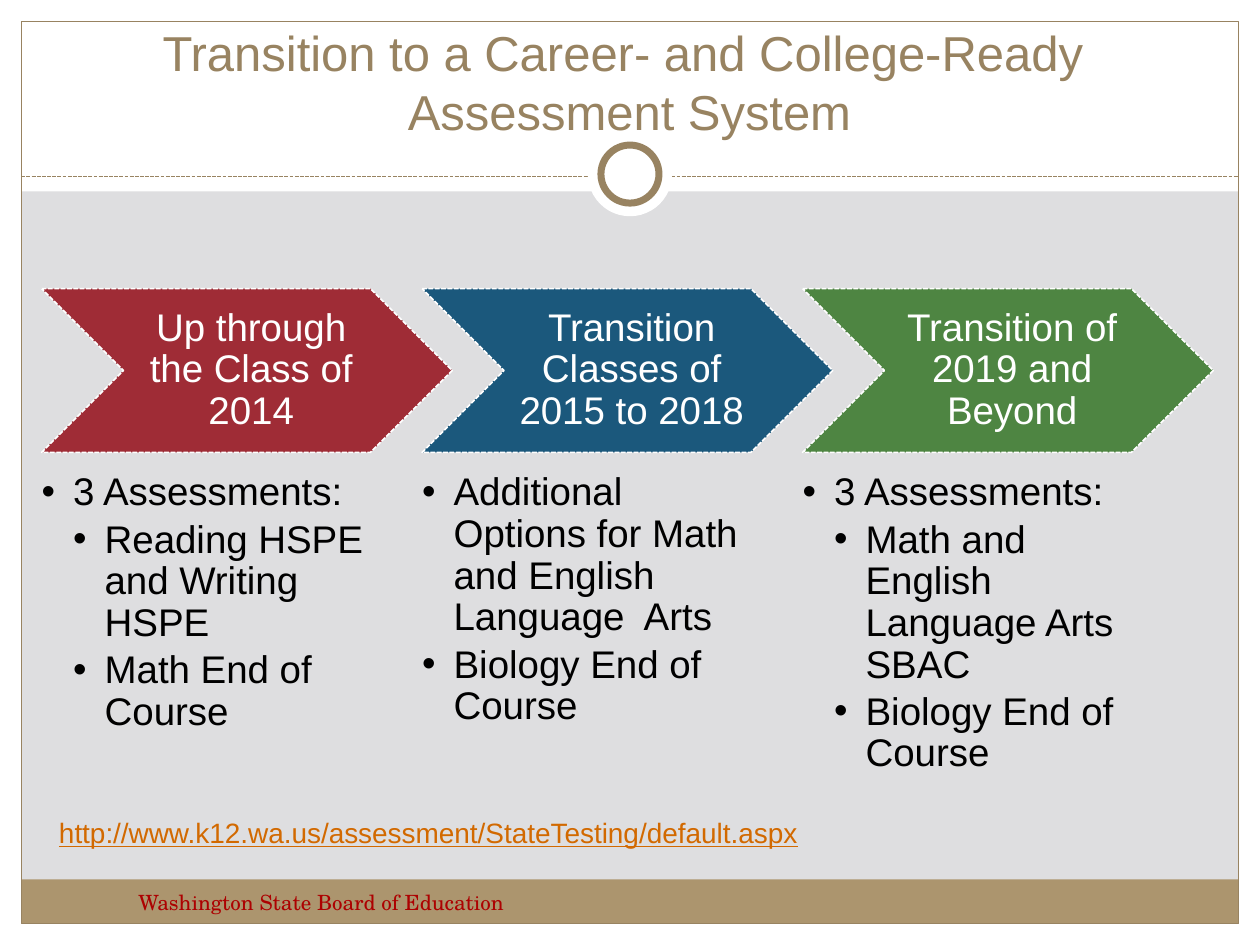
import dataclasses

import lxml.etree
import pptx
import pptx.dml.color
import pptx.enum.dml
import pptx.enum.shapes
import pptx.enum.text
import pptx.oxml.ns
import pptx.util

Cm = pptx.util.Cm
Pt = pptx.util.Pt
qn = pptx.oxml.ns.qn
Shape = pptx.enum.shapes.MSO_SHAPE
Align = pptx.enum.text.PP_ALIGN
Anchor = pptx.enum.text.MSO_ANCHOR
Fit = pptx.enum.text.MSO_AUTO_SIZE
Dash = pptx.enum.dml.MSO_LINE.SQUARE_DOT


@dataclasses.dataclass(frozen=True)
class Theme:
    sans: str = "Arial"
    serif: str = "TeX Gyre Schola"
    back: str = "DEDEE0"
    white: str = "FFFFFF"
    black: str = "000000"
    tan: str = "988361"
    bar: str = "AC956E"
    red: str = "AD0101"
    link: str = "D26900"
    steps: tuple = ("9F2C36", "1B587C", "4E8542")
    head: int = 28
    body: int = 22
    url: int = 16
    foot: int = 12


THEME = Theme()

STEPS = [
    ("Up through the Class of 2014",
     [(1, "3 Assessments:"),
      (2, "Reading HSPE and Writing HSPE"),
      (2, "Math End of Course")]),
    ("Transition Classes of 2015 to 2018",
     [(1, "Additional Options for Math and English Language  Arts"),
      (1, "Biology End of Course")]),
    ("Transition of 2019 and Beyond",
     [(1, "3 Assessments:"),
      (2, "Math and English Language Arts SBAC"),
      (2, "Biology End of Course")]),
]


def rgb(code):
    return pptx.dml.color.RGBColor.from_string(code)


def place(shape, box):
    shape.left, shape.top, shape.width, shape.height = map(Cm, box)


def lift(shape):
    shape.element.getparent().append(shape.element)


def style(para, size, color, face=THEME.sans):
    font = para.font
    font.name, font.size, font.color.rgb = face, Pt(size), rgb(color)


def inset(frame, left, rest):
    frame.margin_left = Cm(left)
    frame.margin_top = frame.margin_right = frame.margin_bottom = Cm(rest)


def stroke(line, color, width, dash=None):
    line.color.rgb = rgb(color)
    line.width = Pt(width)
    if dash:
        line.dash_style = dash


def draw(slide, kind, box, fill=None, line=None):
    shape = slide.shapes.add_shape(kind, *map(Cm, box))
    shape.shadow.inherit = False
    if fill:
        shape.fill.solid()
        shape.fill.fore_color.rgb = rgb(fill)
    else:
        shape.fill.background()
    if line:
        stroke(shape.line, *line)
    else:
        shape.line.fill.background()
    return shape


def disc(slide, x, y, size, line=None):
    box = (x - size / 2, y - size / 2, size, size)
    draw(slide, Shape.OVAL, box, THEME.white, line)


def frame(slide, box):
    x, y, w, h = box
    edge, band, foot = 0.43, 3.86, 0.89
    inner = w - 2 * edge
    for strip in ((x, y + h - edge, w, edge), (x, y, w, band),
                  (x, y, edge, h), (x + w - edge, y, edge, h)):
        draw(slide, Shape.RECTANGLE, strip, THEME.white)
    draw(slide, Shape.RECTANGLE,
         (x + edge, y + h - edge - foot, inner, foot), THEME.bar)
    draw(slide, Shape.RECTANGLE,
         (x + edge, y + edge, inner, h - 2 * edge), line=(THEME.tan, 0.75))
    rule = slide.shapes.add_connector(
        pptx.enum.shapes.MSO_CONNECTOR.STRAIGHT,
        Cm(x + edge), Cm(y + 3.56), Cm(x + w - edge), Cm(y + 3.56))
    stroke(rule.line, THEME.tan, 0.75, Dash)
    lxml.etree.SubElement(rule.element.spPr, qn("a:effectLst"))
    disc(slide, x + w / 2, y + 3.51, 1.7)
    disc(slide, x + w / 2, y + 3.51, 1.17, (THEME.tan, 4))


def title(slide, box, text):
    shape = slide.shapes.title
    place(shape, box)
    lift(shape)
    area = shape.text_frame
    area.text = text
    area.auto_size = Fit.NONE
    area.vertical_anchor = Anchor.BOTTOM
    para = area.paragraphs[0]
    para.alignment = Align.CENTER
    style(para, THEME.head, THEME.tan)


def bullets(holder, box, items):
    place(holder, box)
    lift(holder)
    area = holder.text_frame
    area.text = "\n".join(text for _, text in items)
    area.auto_size = Fit.NONE
    area.vertical_anchor = Anchor.TOP
    inset(area, 0, 0)
    for para, (level, _) in zip(area.paragraphs, items):
        para.level = level
        props = para._p.get_or_add_pPr()
        props.set("marL", str(Cm(0.635 * level)))
        props.set("indent", str(-Cm(0.635)))
        lxml.etree.SubElement(props, qn("a:buFont")).set("typeface", THEME.sans)
        lxml.etree.SubElement(props, qn("a:buChar")).set("char", "•")
        para.alignment = Align.LEFT
        para.line_spacing = 0.9
        para.space_before = Pt(0)
        para.space_after = Pt(3.3)
        style(para, THEME.body, THEME.black)
        para.font.bold = False


def step(slide, box, holder, fill, head, items):
    x, y, w, h = box
    tall = 3.3
    arrow = draw(slide, Shape.CHEVRON, (x, y, w, tall), fill,
                 (THEME.white, 0.9, Dash))
    area = arrow.text_frame
    area.text = head
    area.word_wrap = True
    area.vertical_anchor = Anchor.MIDDLE
    inset(area, 0.25, 0.08)
    para = area.paragraphs[0]
    para.alignment = Align.CENTER
    para.line_spacing = 0.9
    style(para, THEME.body, THEME.white)
    bullets(holder, (x, y + 3.71, 6.6, h - 3.71), items)


def steps(slide, box):
    x, y, w, h = box
    wide = 8.28
    pitch = (w - wide) / (len(STEPS) - 1)
    bodies = [item for item in slide.placeholders
              if item.placeholder_format.idx]
    for i, (head, items) in enumerate(STEPS):
        step(slide, (x + i * pitch, y, wide, h), bodies[i],
             THEME.steps[i], head, items)
    for spare in bodies[len(STEPS):]:
        spare.element.getparent().remove(spare.element)


def note(slide, box, text, size, color, face=THEME.sans, under=None):
    shape = slide.shapes.add_textbox(*map(Cm, box))
    area = shape.text_frame
    area.text = text
    area.word_wrap = True
    para = area.paragraphs[0]
    style(para, size, color, face)
    para.font.underline = under


def main():
    deck = pptx.Presentation()
    deck.slide_width, deck.slide_height = Cm(25.4), Cm(19.05)
    slide = deck.slides.add_slide(deck.slide_layouts.get_by_name("Comparison"))
    slide.background.fill.solid()
    slide.background.fill.fore_color.rgb = rgb(THEME.back)
    frame(slide, (0, 0, 25.4, 19.05))
    title(slide, (0.84, 0.84, 23.7, 2.11),
          "Transition to a Career- and College-Ready \vAssessment System")
    note(slide, (2.54, 17.81, 9.96, 1.02), "Washington State Board of Education",
         THEME.foot, THEME.red, THEME.serif)
    steps(slide, (0.84, 5.82, 23.62, 9.75))
    note(slide, (0.94, 16.31, 15.6, 1.7),
         "http://www.k12.wa.us/assessment/StateTesting/default.aspx",
         THEME.url, THEME.link, under=True)
    deck.save("out.pptx")


if __name__ == "__main__":
    main()
